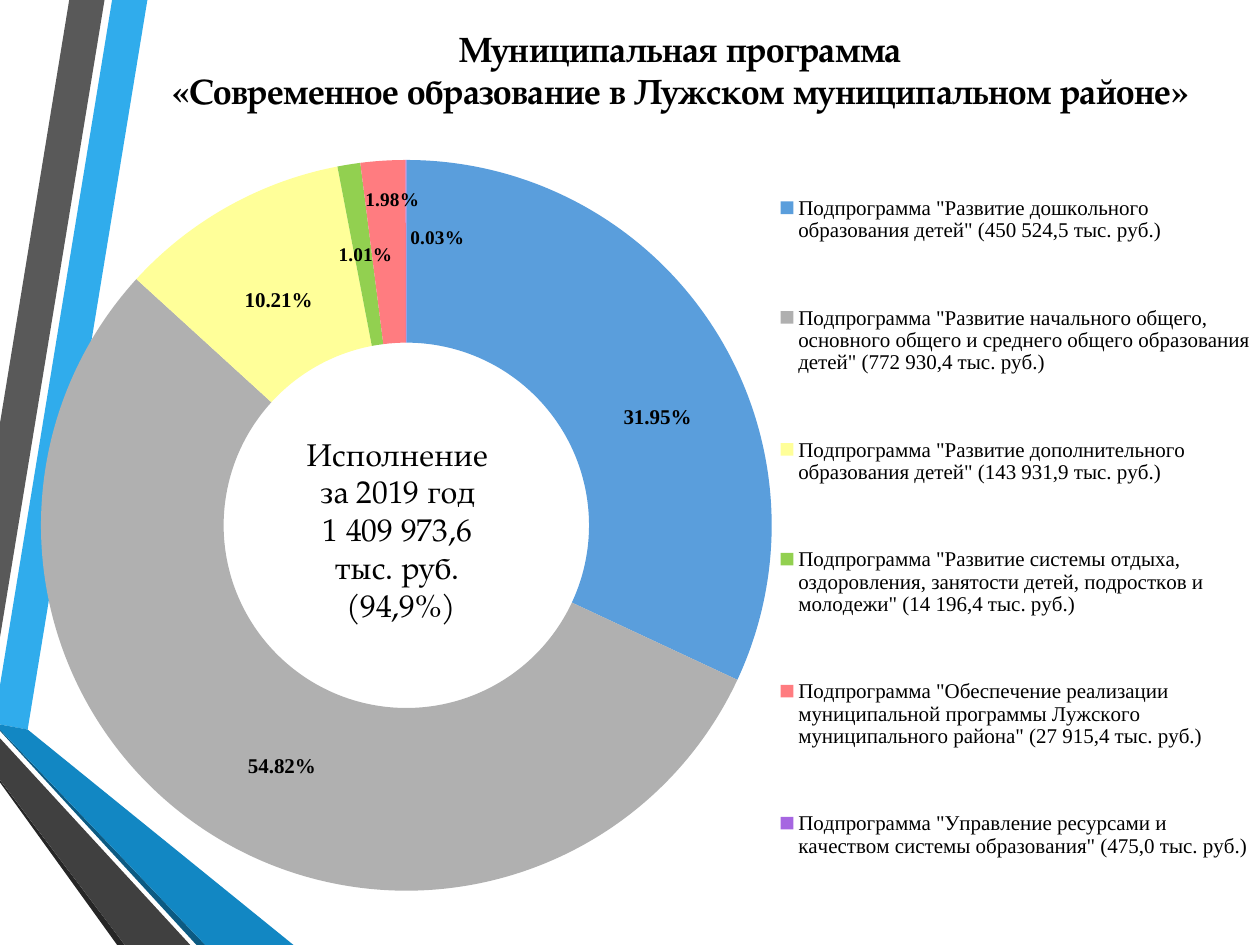
from lxml import etree
from pptx import Presentation
from pptx.chart.data import CategoryChartData
from pptx.dml.color import RGBColor as RGB
from pptx.enum.chart import XL_CHART_TYPE as Kind, XL_LEGEND_POSITION as Side
from pptx.enum.text import MSO_ANCHOR as Anchor, PP_ALIGN as Align
from pptx.oxml.ns import qn
from pptx.util import Inches, Pt

BLACK = RGB(0, 0, 0)
SERIF, ROMAN = "TeX Gyre Pagella", "Times New Roman"
WIDE, HIGH = 9.8, 6.58  # chart size

TITLE = ("Муниципальная программа \v"
         "«Современное образование в Лужском муниципальном районе» ")
TOTAL = ["Исполнение ", "за 2019 год ", "1 409 973,6 ", "тыс. руб. ", "(94,9%)"]

# fill, corner points
RIBBONS = [
    (RGB(0x30, 0xAC, 0xEC), [(0, 5.44), (0, 5.75), (0.22, 5.79), (1.17, 0), (0.89, 0)]),
    (RGB(0x59, 0x59, 0x59), [(0.83, 0), (0.55, 0), (0, 3.36), (0, 5.06)]),
    (RGB(0x26, 0x26, 0x26), [(0, 6.19), (0, 6.21), (0.93, 7.5), (0.99, 7.5)]),
    (RGB(0x0C, 0x5A, 0x82), [(0, 5.79), (0, 5.8), (1.56, 7.5), (1.63, 7.5)]),
    (RGB(0x12, 0x87, 0xC3), [(0, 5.79), (1.63, 7.5), (2.33, 7.5), (0.22, 5.79), (0, 5.75)]),
    (RGB(0x40, 0x40, 0x40), [(0, 6.19), (0.99, 7.5), (1.51, 7.5), (0, 5.86)]),
]

# name, amount, percent, fill, label size, label shift in inches
PARTS = [
    ("Развитие дошкольного образования детей", "450 524,5",
     31.95, RGB(0x5A, 0x9E, 0xDC), 12, (0.16, 0.31)),
    ("Развитие начального общего, основного общего и среднего общего образования детей",
     "772 930,4", 54.82, RGB(0xB0, 0xB0, 0xB0), 12, (0.22, 0.1)),
    ("Развитие дополнительного образования детей", "143 931,9",
     10.21, RGB(0xFF, 0xFF, 0x99), 12, (0.05, 0.11)),
    ("Развитие системы отдыха, оздоровления, занятости детей, подростков и молодежи",
     "14 196,4", 1.01, RGB(0x92, 0xD0, 0x50), 11, (0.02, 0)),
    ("Обеспечение реализации муниципальной программы Лужского муниципального района",
     "27 915,4", 1.98, RGB(0xFF, 0x7C, 0x80), 11, (0.03, -0.41)),
    ("Управление ресурсами и качеством системы образования", "475,0",
     0.03, RGB(0xA6, 0x66, 0xE1), 11, (0.25, -0.11)),
]


def style(font, name, size, bold=False):
    font.name, font.size, font.bold = name, Pt(size), bold
    font.color.rgb = BLACK


def node(tag, **attrs):
    item = etree.Element(qn(tag))
    for key, value in attrs.items():
        item.set(key, str(value))
    return item


def place(parent, spot, x, y, w=None, h=None, **modes):
    """Give a chart part a manual layout, measured in inches of the chart."""
    for old in parent.findall(qn("c:layout")):
        parent.remove(old)
    top = node("c:layout")
    inner = etree.SubElement(top, qn("c:manualLayout"))
    marks = dict(modes, x=x / WIDE, y=y / HIGH)
    if w:
        marks.update(w=w / WIDE, h=h / HIGH)
    for key, value in marks.items():
        inner.append(node("c:" + key, val=value))
    parent.insert(spot, top)


def add_ribbon(slide, fill, points):
    spots = [(Inches(x), Inches(y)) for x, y in points]
    pen = slide.shapes.build_freeform(*spots[0])
    pen.add_line_segments(spots[1:], close=True)
    shape = pen.convert_to_shape()
    shape.shadow.inherit = False
    shape.fill.solid()
    shape.fill.fore_color.rgb = fill
    shape.line.fill.background()


def add_label(point, size, shift):
    label = point.data_label
    style(label.font, ROMAN, size, True)
    root = label._get_or_add_dLbl()
    root.find(qn("c:showVal")).set("val", "0")
    root.find(qn("c:showPercent")).set("val", "1")
    root.insert(1, node("c:numFmt", formatCode="0.00%", sourceLinked=0))
    place(root, 1, *shift)


def add_ring(slide):
    data = CategoryChartData()
    data.categories = [f'Подпрограмма "{name}" ({cost} тыс. руб.)'
                       for name, cost, *_ in PARTS]
    data.add_series("Series 1", [part[2] for part in PARTS])
    chart = slide.shapes.add_chart(Kind.DOUGHNUT, Inches(0.2), Inches(0.92),
                                   Inches(WIDE), Inches(HIGH), data).chart
    chart.has_title = False
    style(chart.font, "Cabin", 18)
    chart.has_legend = True
    legend = chart.legend
    legend.position = Side.RIGHT
    legend.include_in_layout = False
    style(legend.font, ROMAN, 12)
    place(legend._element, 1, 5.98, 0.13, 3.82, 6.27, xMode="edge", yMode="edge")
    place(chart._chartSpace.chart.plotArea, 0, 0.09, 0.35, 5.87, 5.8,
          layoutTarget="inner", xMode="edge", yMode="edge")

    plot = chart.plots[0]
    plot.vary_by_categories = True
    plot._element.find(qn("c:holeSize")).set("val", "50")
    series = plot.series[0]
    labels = series.data_labels
    labels.show_value, labels.show_percentage = False, True
    labels.number_format, labels.number_format_is_linked = "0.00%", False
    style(labels.font, ROMAN, 11, True)
    for i, (*_, fill, size, shift) in enumerate(PARTS):
        point = series.points[i]
        point.format.fill.solid()
        point.format.fill.fore_color.rgb = fill
        point.format.line.fill.background()
        add_label(point, size, shift)


def add_title(slide):
    title = slide.shapes.title
    title.left, title.top = Inches(0.59), Inches(0.2)
    title.width, title.height = Inches(9.69), Inches(0.71)
    frame = title.text_frame
    frame.text = TITLE
    frame.vertical_anchor = Anchor.MIDDLE
    para = frame.paragraphs[0]
    para.alignment = Align.CENTER
    style(para.font, SERIF, 20, True)


def add_total(slide):
    box = slide.shapes.add_textbox(Inches(1.77), Inches(3.4), Inches(2.83), Inches(1.62))
    frame = box.text_frame
    frame.word_wrap = True
    frame.text = "\n".join(TOTAL)
    for para in frame.paragraphs:
        para.alignment = Align.CENTER
        style(para.font, SERIF, 18)


def main():
    deck = Presentation()
    deck.slide_width, deck.slide_height = Inches(10), Inches(7.5)
    slide = deck.slides.add_slide(deck.slide_layouts[5])
    for fill, points in RIBBONS:
        add_ribbon(slide, fill, points)
    add_ring(slide)
    add_title(slide)
    add_total(slide)
    deck.save("out.pptx")


if __name__ == "__main__":
    main()
